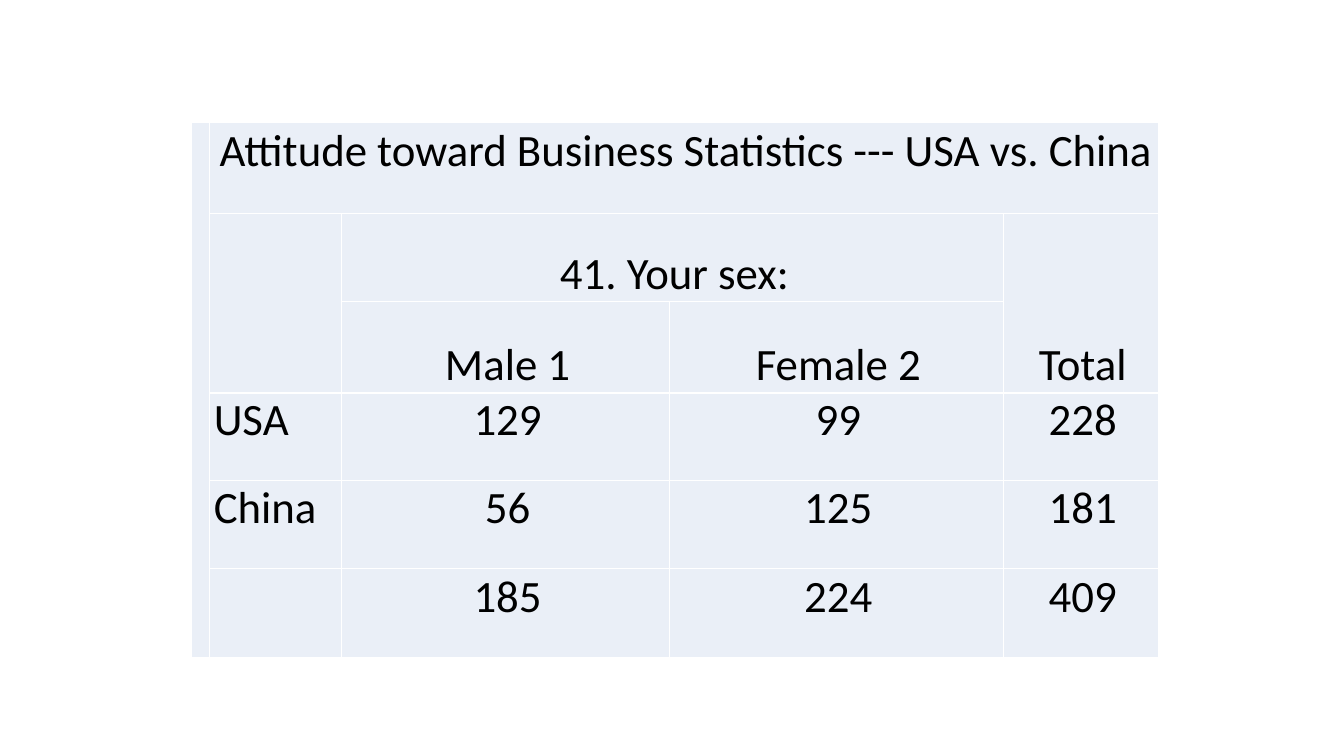
from lxml.etree import SubElement
from pptx import Presentation
from pptx.dml.color import RGBColor as RGB
from pptx.enum.text import MSO_ANCHOR as Anchor, PP_ALIGN as Align
from pptx.oxml.ns import qn
from pptx.util import Inches, Pt

HUES = {"cell": "EAEFF7", "rule": "FFFFFF", "ink": "000000"}
FONT = "Calibri"
COLS = [0.18, 1.31, 3.25, 3.31, 1.54]
ROWS = [0.91, 0.87, 0.91, 0.87, 0.87, 0.89]

# First and last cell of each merged block, as (row, column)
SPANS = [((0, 0), (5, 0)), ((0, 1), (0, 4)), ((1, 1), (2, 1)),
         ((1, 2), (1, 3)), ((1, 4), (2, 4))]
HEADS = {(0, 1): "Attitude toward Business Statistics --- USA vs. China",
         (1, 2): "41. Your sex:", (1, 4): "Total",
         (2, 2): "Male 1", (2, 3): "Female 2"}
COUNTS = [["USA", 129, 99, 228], ["China", 56, 125, 181], ["", 185, 224, 409]]


def write(cell, text, size=32, align=Align.CENTER, anchor=Anchor.MIDDLE):
    cell.vertical_anchor = anchor
    par = cell.text_frame.paragraphs[0]
    par.alignment = align
    par.line_spacing = Pt(16)
    par._p.get_or_add_pPr().set("marL", str(Inches(0.04)))
    run = par.add_run()
    run.text = text
    run.font.size = Pt(size)
    run.font.name = FONT
    run.font.color.rgb = RGB.from_string(HUES["ink"])


def dress(cell):
    """Zero margins, white rules on all four sides, plain fill."""
    cell.margin_left = cell.margin_right = 0
    cell.margin_top = cell.margin_bottom = 0
    props = cell._tc.get_or_add_tcPr()
    for side in ("lnL", "lnR", "lnT", "lnB"):
        line = SubElement(props, qn(f"a:{side}"), w=str(Pt(1)))
        paint = SubElement(line, qn("a:solidFill"))
        SubElement(paint, qn("a:srgbClr"), val=HUES["rule"])
    cell.fill.solid()
    cell.fill.fore_color.rgb = RGB.from_string(HUES["cell"])


def cross_table(slide, left, top):
    frame = slide.shapes.add_table(len(ROWS), len(COLS), Inches(left), Inches(top),
                                   Inches(sum(COLS)), Inches(sum(ROWS)))
    table = frame.table
    for col, width in zip(table.columns, COLS):
        col.width = Inches(width)
    for row, height in zip(table.rows, ROWS):
        row.height = Inches(height)
    for cell in table.iter_cells():
        dress(cell)
    for first, last in SPANS:
        table.cell(*first).merge(table.cell(*last))

    # Title and column heads
    for (row, col), text in HEADS.items():
        write(table.cell(row, col), text,
              anchor=Anchor.BOTTOM if row else Anchor.MIDDLE)

    # Counts by country, with totals below
    for row, items in enumerate(COUNTS, 3):
        for col, item in enumerate(items, 1):
            if item != "":
                write(table.cell(row, col), str(item),
                      align=Align.LEFT if col == 1 else Align.CENTER)


def main():
    deck = Presentation()
    deck.slide_width, deck.slide_height = Inches(13.33), Inches(7.5)
    slide = deck.slides.add_slide(deck.slide_layouts[6])
    cross_table(slide, 1.9, 1.21)
    deck.save("out.pptx")


if __name__ == "__main__":
    main()
